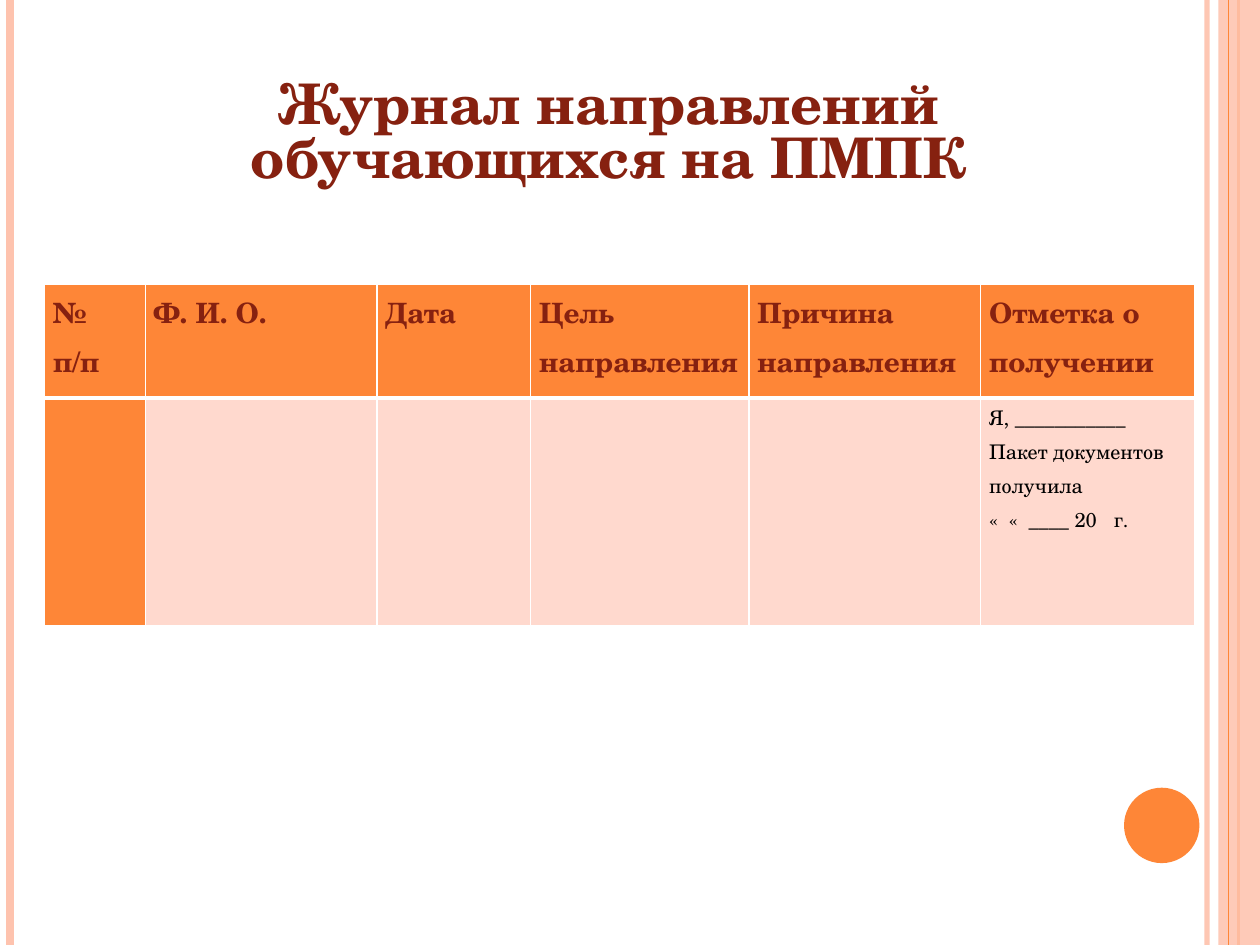
from dataclasses import dataclass

from lxml import etree
from pptx import Presentation
from pptx.dml.color import RGBColor
from pptx.enum.shapes import MSO_CONNECTOR, MSO_SHAPE
from pptx.enum.text import MSO_ANCHOR, MSO_AUTO_SIZE, PP_ALIGN
from pptx.oxml.ns import qn
from pptx.util import Cm, Pt

STRAIGHT = MSO_CONNECTOR.STRAIGHT
RECTANGLE, OVAL = MSO_SHAPE.RECTANGLE, MSO_SHAPE.OVAL
TOP, CENTER, NO_AUTOFIT = MSO_ANCHOR.TOP, PP_ALIGN.CENTER, MSO_AUTO_SIZE.NONE
TITLE_ONLY = 5


@dataclass(frozen=True)
class Theme:
    font: str = "TeX Gyre Schola"
    orange: str = "FE8637"
    peach: str = "FEC3AE"
    pale: str = "FFD9CE"
    brown: str = "862110"
    black: str = "000000"
    white: str = "FFFFFF"
    title_size: float = 32
    header_size: float = 16
    body_size: float = 11.5


THEME = Theme()

TITLE = "Журнал направлений обучающихся на ПМПК"
HEADERS = ["№ п/п", "Ф. И. О.", "Дата", "Цель направления",
           "Причина направления", "Отметка о получении"]
RECEIPT = "Я, ___________\nПакет документов получила\n«  «  ____ 20   г."
COLUMN_WIDTHS = [2.03, 4.67, 3.1, 4.4, 4.67, 4.32]
ROW_HEIGHTS = [2.29, 4.6]


def set_alpha(parent, percent):
    color = parent.find(".//" + qn("a:srgbClr"))
    etree.SubElement(color, qn("a:alpha")).set("val", str(percent * 1000))


def format_text(text_frame, size, color, bold, line_spacing):
    for paragraph in text_frame.paragraphs:
        paragraph.line_spacing = line_spacing
        for run in paragraph.runs:
            run.font.name = THEME.font
            run.font.size = Pt(size)
            run.font.bold = bold
            run.font.color.rgb = RGBColor.from_string(color)


def add_stripe(slide, x, top, height, color, width, alpha=100):
    line = slide.shapes.add_connector(STRAIGHT, Cm(x), Cm(top), Cm(x), Cm(top + height))
    line.line.color.rgb = RGBColor.from_string(color)
    line.line.width = Pt(width)
    properties = line._element.spPr
    if alpha < 100:
        set_alpha(properties, alpha)
    etree.SubElement(properties, qn("a:effectLst"))


def add_plain_shape(slide, kind, left, top, width, height, color):
    shape = slide.shapes.add_shape(kind, Cm(left), Cm(top), Cm(width), Cm(height))
    shape.shadow.inherit = False
    shape.fill.solid()
    shape.fill.fore_color.rgb = RGBColor.from_string(color)
    shape.line.fill.background()
    return shape


def add_decoration(slide, left, top, width, height):
    right = left + width
    add_stripe(slide, right - 1.07, top, height, THEME.peach, 3, 93)
    add_stripe(slide, left + 0.2, top, height, THEME.peach, 4.5)
    add_stripe(slide, right - 0.43, top, height, THEME.orange, 1.5)
    band = add_plain_shape(slide, RECTANGLE, right - 0.84, top, 0.84, height, THEME.peach)
    set_alpha(band._element.spPr, 87)
    add_stripe(slide, right - 0.64, top, height, THEME.orange, 0.75)
    add_plain_shape(slide, OVAL, right - 2.74, top + height - 3.17, 1.52, 1.52, THEME.orange)


def add_title(slide, left, top, width, height):
    title = slide.shapes.title
    title.left, title.top, title.width, title.height = map(Cm, (left, top, width, height))
    text_frame = title.text_frame
    text_frame.text = TITLE
    text_frame.word_wrap = True
    text_frame.auto_size = NO_AUTOFIT
    text_frame.vertical_anchor = TOP
    paragraph = text_frame.paragraphs[0]
    paragraph.alignment = CENTER
    paragraph.space_before = Pt(6)
    format_text(text_frame, THEME.title_size, THEME.brown, True, 0.8)


def set_borders(cell, **widths):
    properties = cell._tc.get_or_add_tcPr()
    for index, side in enumerate("LRTB"):
        border = etree.Element(qn("a:ln" + side), w=str(Pt(widths.get(side, 1))))
        fill = etree.SubElement(border, qn("a:solidFill"))
        etree.SubElement(fill, qn("a:srgbClr"), val=THEME.white)
        properties.insert(index, border)


def style_cell(cell, text, fill, size, color, bold):
    cell.margin_left = cell.margin_right = Cm(0.17)
    cell.margin_top = cell.margin_bottom = 0
    cell.fill.solid()
    cell.fill.fore_color.rgb = RGBColor.from_string(fill)
    cell.text_frame.text = text
    format_text(cell.text_frame, size, color, bold, 1.15)


def add_journal(slide, left, top):
    frame = slide.shapes.add_table(
        len(ROW_HEIGHTS), len(COLUMN_WIDTHS), Cm(left), Cm(top),
        Cm(sum(COLUMN_WIDTHS)), Cm(sum(ROW_HEIGHTS)))
    table = frame.table
    table.horz_banding = False
    for row, height in zip(table.rows, ROW_HEIGHTS):
        row.height = Cm(height)
    last = len(COLUMN_WIDTHS) - 1
    for index, (width, header) in enumerate(zip(COLUMN_WIDTHS, HEADERS)):
        table.columns[index].width = Cm(width)
        # Header cell, with the thick rule below it
        cell = table.cell(0, index)
        style_cell(cell, header, THEME.orange, THEME.header_size, THEME.brown, True)
        set_borders(cell, B=3)
        # Entry cell
        cell = table.cell(1, index)
        style_cell(cell, RECEIPT if index == last else "",
                   THEME.pale if index else THEME.orange,
                   THEME.body_size, THEME.black, False)
        set_borders(cell, T=3)


def main():
    presentation = Presentation()
    presentation.slide_width, presentation.slide_height = Cm(25.4), Cm(19.05)
    slide = presentation.slides.add_slide(presentation.slide_layouts[TITLE_ONLY])
    add_decoration(slide, 0, 0, 25.4, 19.05)
    add_title(slide, 1.9, 1.52, 20.75, 13.54)
    add_journal(slide, 0.9, 5.73)
    presentation.save("out.pptx")


if __name__ == "__main__":
    main()
